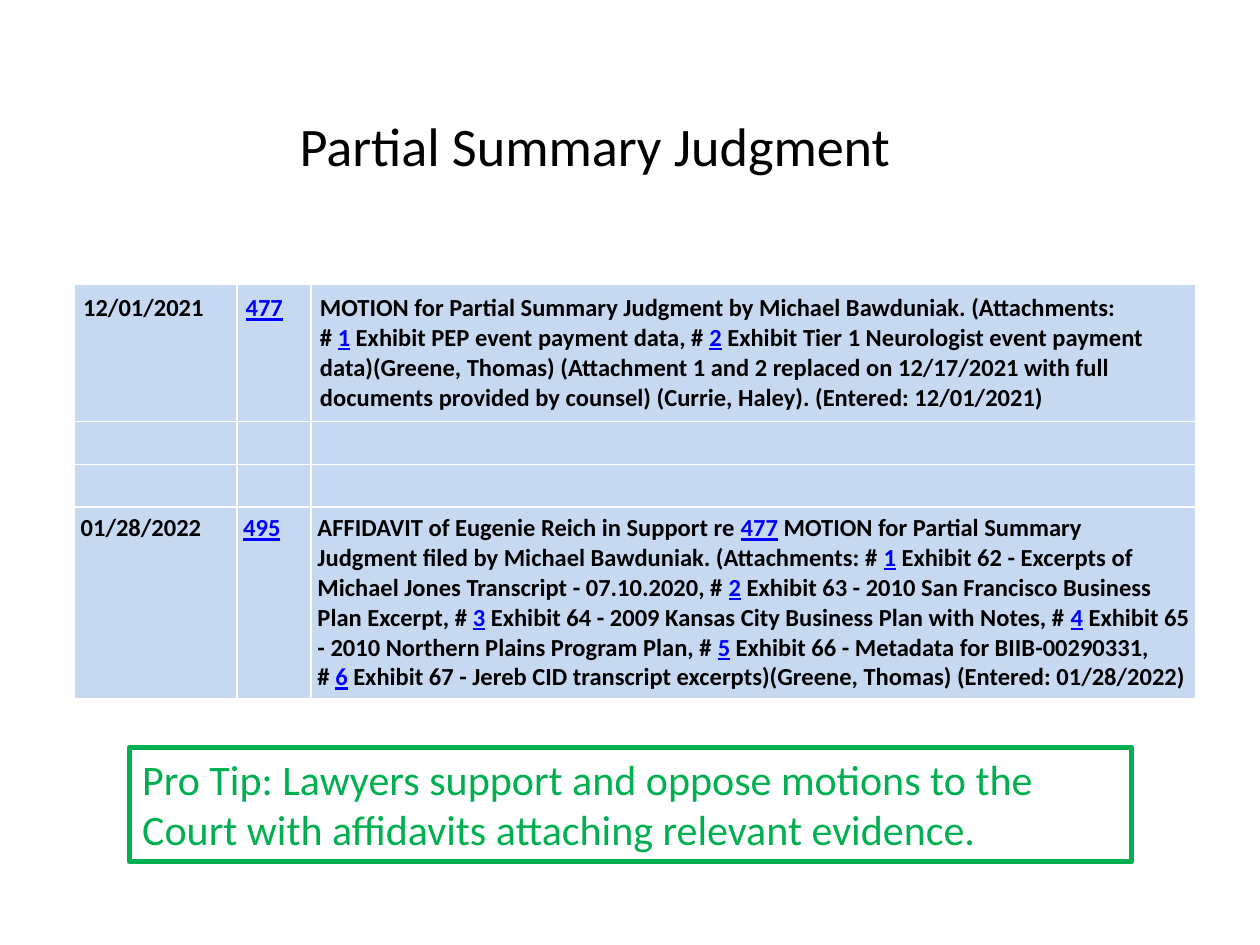
from pptx import Presentation
from pptx.dml.color import RGBColor
from pptx.enum.shapes import MSO_SHAPE
from pptx.enum.text import MSO_ANCHOR, MSO_AUTO_SIZE, PP_ALIGN
from pptx.oxml.ns import qn
from pptx.util import Inches, Pt
from lxml import etree

RECT = MSO_SHAPE.RECTANGLE
TOP, BOTTOM = MSO_ANCHOR.TOP, MSO_ANCHOR.BOTTOM
LEFT, CENTER = PP_ALIGN.LEFT, PP_ALIGN.CENTER
GROW, FIXED = MSO_AUTO_SIZE.SHAPE_TO_FIT_TEXT, MSO_AUTO_SIZE.NONE

COLORS = {"ink": "000000", "link": "0000FF", "cell": "C6D9F1", "tip": "00B050"}
COLS, ROWS = 100, 75
HARD = chr(160)  # "_" in the docket texts stands for this no-break space

# Text between bars is a link.
DOCKET = [
    ["12/01/2021", "|477|_",
     "MOTION for Partial Summary Judgment_by Michael Bawduniak. (Attachments: "
     "#_|1|_Exhibit PEP event payment data, #_|2|_Exhibit Tier 1 Neurologist "
     "event payment data)(Greene, Thomas) (Attachment 1 and 2 replaced on "
     "12/17/2021 with full documents provided by counsel) (Currie, Haley). "
     "(Entered: 12/01/2021)"],
    ["", "", ""],
    ["", "", ""],
    ["01/28/2022", "|495|_",
     "AFFIDAVIT of Eugenie Reich in Support re_|477|_MOTION for Partial Summary "
     "Judgment_filed by Michael Bawduniak. (Attachments: #_|1|_Exhibit 62 - "
     "Excerpts of Michael Jones Transcript - 07.10.2020, #_|2|_Exhibit 63 - 2010 "
     "San Francisco Business Plan Excerpt, #_|3|_Exhibit 64 - 2009 Kansas City "
     "Business Plan with Notes, #_|4|_Exhibit 65 - 2010 Northern Plains Program "
     "Plan, #_|5|_Exhibit 66 - Metadata for BIIB-00290331, #_|6|_Exhibit 67 - "
     "Jereb CID transcript excerpts)(Greene, Thomas) (Entered: 01/28/2022)"],
]


def color(name):
    return RGBColor.from_string(COLORS[name])


def apply(target, **values):
    for name, value in values.items():
        setattr(target, name, value)


class Deck:
    def __init__(self, font):
        self.font = font
        self.prs = Presentation()
        apply(self.prs, slide_width=Inches(10), slide_height=Inches(7.5))
        self.slide = self.prs.slides.add_slide(self.prs.slide_layouts[5])

    def x(self, cols):
        return round(self.prs.slide_width * cols / COLS)

    def y(self, rows):
        return round(self.prs.slide_height * rows / ROWS)

    def place(self, x, y, w, h):
        return self.x(x), self.y(y), self.x(w), self.y(h)

    def text(self, para, words, size, ink="ink", **style):
        run = para.add_run()
        run.text = words
        apply(run.font, name=self.font, size=Pt(size), **style)
        run.font.color.rgb = color(ink)

    def title(self, words, box, size):
        shape = self.slide.shapes.title
        apply(shape, **dict(zip(("left", "top", "width", "height"), self.place(*box))))
        frame = shape.text_frame
        apply(frame, vertical_anchor=BOTTOM, margin_bottom=Inches(0.1),
              word_wrap=True, auto_size=FIXED)
        para = frame.paragraphs[0]
        para.alignment = CENTER
        self.text(para, words, size)

    def cell(self, cell, words, size, inset):
        cell.fill.solid()
        cell.fill.fore_color.rgb = color("cell")
        apply(cell, **{f"margin_{side}": Inches(inset)
                       for side in ("left", "top", "right", "bottom")})
        para = cell.text_frame.paragraphs[0]
        if not words:
            # An empty cell takes its line height from the end mark.
            etree.SubElement(para._p, qn("a:endParaRPr"), sz=str(size * 100))
            return
        for i, part in enumerate(words.replace("_", HARD).split("|")):
            if part:
                link = i % 2 == 1
                self.text(para, part, size, "link" if link else "ink",
                          bold=True, underline=link)

    def table(self, data, at, widths, heights, insets, size):
        box = self.place(*at, sum(widths), sum(heights))
        table = self.slide.shapes.add_table(len(data), len(widths), *box).table
        table.horz_banding = False
        for col, width in zip(table.columns, widths):
            col.width = self.x(width)
        for row, height, inset, line in zip(table.rows, heights, insets, data):
            row.height = self.y(height)
            for cell, words in zip(row.cells, line):
                self.cell(cell, words, size, inset)

    def tip(self, words, box, size):
        shape = self.slide.shapes.add_shape(RECT, *self.place(*box))
        shape.shadow.inherit = False
        shape.fill.background()
        shape.line.color.rgb = color("tip")
        shape.line.width = Pt(3)
        frame = shape.text_frame
        apply(frame, word_wrap=True, auto_size=GROW, vertical_anchor=TOP)
        para = frame.paragraphs[0]
        para.alignment = LEFT
        self.text(para, words, size, "tip")


def main():
    deck = Deck("Calibri")
    deck.title("Partial Summary Judgment", (1.6, 2.6, 91.2, 12.5), 31)
    deck.table(DOCKET, (5.9, 22.6), (12.9, 5.9, 70.2), (10.8, 3.4, 3.4, 15.2),
               (0.07, 0.05, 0.05, 0.05), 14)
    deck.tip("Pro Tip: Lawyers support and oppose motions to the Court with "
             "affidavits attaching relevant evidence.", (10.3, 59.3, 79.5, 9.1), 24)
    deck.prs.save("out.pptx")


if __name__ == "__main__":
    main()
